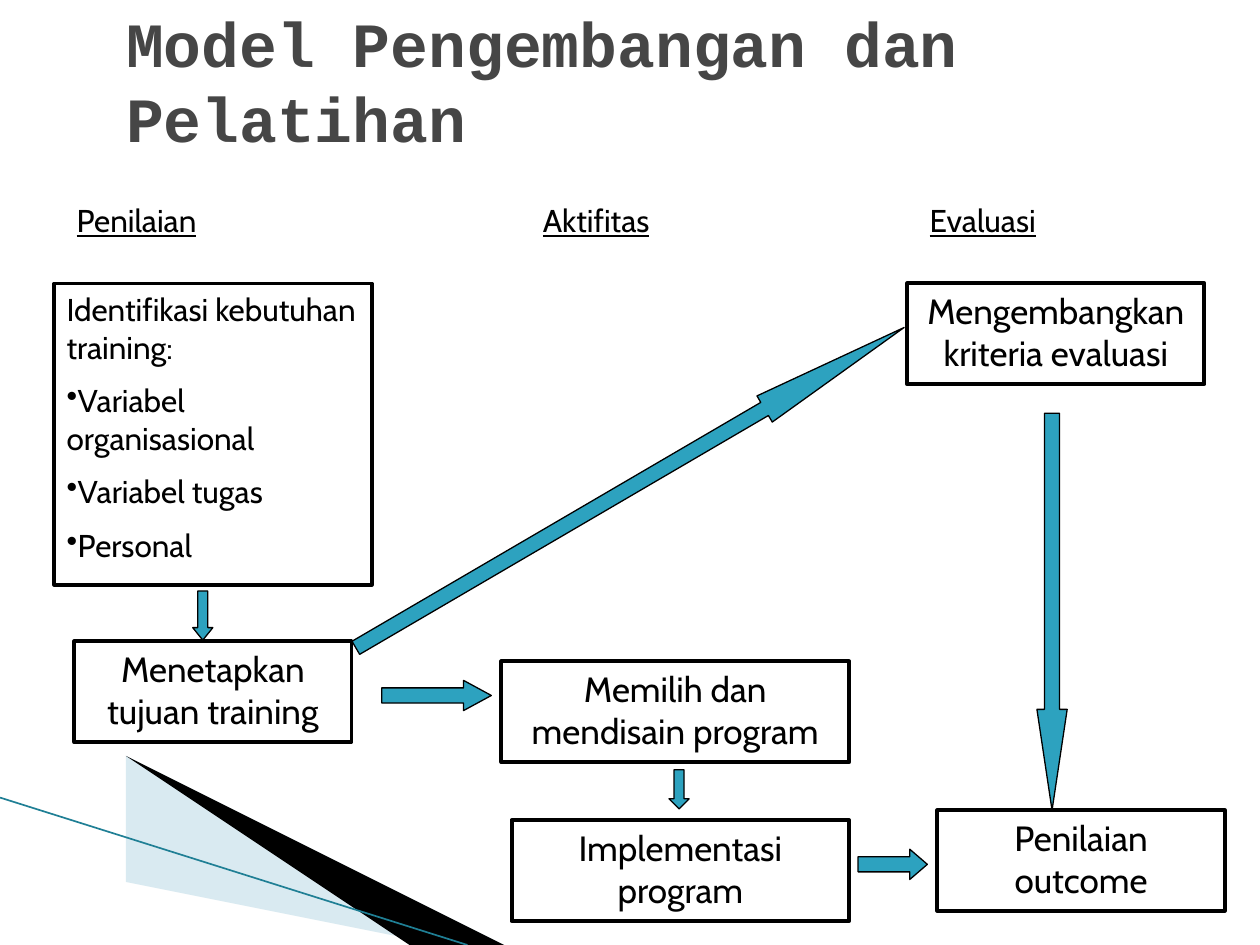
from lxml.etree import SubElement
from pptx import Presentation
from pptx.dml.color import RGBColor
from pptx.enum.shapes import MSO_CONNECTOR, MSO_SHAPE
from pptx.enum.text import MSO_ANCHOR as ANCHOR, MSO_AUTO_SIZE as AUTO, PP_ALIGN as ALIGN
from pptx.oxml.ns import qn
from pptx.util import Inches, Pt

BLACK, GREY, TEAL, EDGE, PALE = "000000", "464646", "2DA2BF", "1F7F95", "A0CBDC"
RIGHT, DOWN = MSO_SHAPE.RIGHT_ARROW, MSO_SHAPE.DOWN_ARROW

TITLE = "Model Pengembangan dan Pelatihan"

# Column headings: text, left, width
HEADINGS = [("Penilaian", 0.51, 2.36), ("Aktifitas", 4.21, 1.81), ("Evaluasi", 7.28, 2.28)]
HEADING_TOP, HEADING_HEIGHT = 1.55, 0.5

NEEDS = ["Identifikasi kebutuhan training:", "Variabel organisasional", "Variabel tugas", "Personal"]
NEEDS_AREA = (0.43, 2.25, 2.52, 2.39)

# Step boxes: text, left, top, width
STEPS = [
    ("Menetapkan tujuan training", 0.59, 5.09, 2.2),
    ("Memilih dan mendisain program", 3.98, 5.25, 2.76),
    ("Implementasi program", 4.06, 6.51, 2.68),
    ("Penilaian outcome", 7.44, 6.43, 2.28),
    ("Mengembangkan kriteria evaluasi", 7.2, 2.25, 2.36),
]
STEP_HEIGHT = 0.8

# Block arrows: kind, area, head length relative to the thickness, rotation
ARROWS = [
    (RIGHT, (3.03, 5.4, 0.87, 0.24), 0.92, 0),
    (DOWN, (5.31, 6.11, 0.16, 0.31), 0.5, 0),
    (RIGHT, (6.81, 6.74, 0.55, 0.24), 0.58, 0),
    (DOWN, (1.53, 4.69, 0.16, 0.39), 0.62, 0),
    (DOWN, (8.23, 3.28, 0.24, 3.15), 3.33, 0),
    (RIGHT, (2.48, 3.75, 5.04, 0.24), 5.34, 329.7),
]

# Corner wedges: points, colour, opacity in percent
WEDGES = [
    ([(0.55, 6.51), (5.95, 7.5), (4.56, 7.5), (0.55, 6.5)], PALE, 40),
    ([(0.53, 6.49), (4.57, 7.5), (3.72, 7.5), (0.54, 6.5)], BLACK, 100),
]
CORNER_LINE = (0, 6.33, 3.71, 7.5)


def color(value):
    return RGBColor.from_string(value)


def inches(values):
    return [Inches(value) for value in values]


def write(shape, lines, size=18, font="Cabin", ink=BLACK, bold=False, underline=False,
          align=ALIGN.LEFT, anchor=ANCHOR.TOP, bullets=False):
    """Fill a shape with paragraphs; bullets start at the second one."""
    frame = shape.text_frame
    frame.word_wrap = True
    frame.auto_size = AUTO.NONE
    frame.vertical_anchor = anchor
    for index, line in enumerate(lines):
        para = frame.add_paragraph() if index else frame.paragraphs[0]
        para.alignment = align
        if index:
            para.space_before = Pt(size / 2)
            if bullets:
                SubElement(para._p.get_or_add_pPr(), qn("a:buChar"), char="•")
        span = para.add_run()
        span.text = line
        span.font.name, span.font.size = font, Pt(size)
        span.font.bold, span.font.underline = bold, underline
        span.font.color.rgb = color(ink)


def paint(shape, fill=None, line=None, width=0.75):
    shape.shadow.inherit = False
    if fill:
        shape.fill.solid()
        shape.fill.fore_color.rgb = color(fill)
    else:
        shape.fill.background()
    if line:
        shape.line.color.rgb = color(line)
        shape.line.width = Pt(width)
    else:
        shape.line.fill.background()


def add_box(shapes, area, lines, **style):
    box = shapes.add_shape(MSO_SHAPE.RECTANGLE, *inches(area))
    paint(box, line=BLACK, width=2.25)
    write(box, lines, **style)


def add_corner(shapes):
    for points, fill, opacity in WEDGES:
        builder = shapes.build_freeform(*points[0], scale=Inches(1))
        builder.add_line_segments(points[1:], close=True)
        wedge = builder.convert_to_shape()
        paint(wedge, fill=fill)
        if opacity < 100:
            tone = wedge._element.spPr.find(qn("a:solidFill"))[0]
            SubElement(tone, qn("a:alpha"), val=str(opacity * 1000))
    line = shapes.add_connector(MSO_CONNECTOR.STRAIGHT, *inches(CORNER_LINE))
    line.line.color.rgb = color(EDGE)
    line.line.width = Pt(0.95)
    SubElement(line._element.spPr, qn("a:effectLst"))


def main():
    deck = Presentation()
    deck.slide_width, deck.slide_height = Inches(10), Inches(7.5)
    page = deck.slides.add_slide(deck.slide_layouts[5])
    shapes = page.shapes
    add_corner(shapes)

    # Title
    title = shapes.title
    title.left, title.top, title.width, title.height = inches((0.9, 0.28, 8.5, 0.71))
    write(title, [TITLE], size=36, font="Courier New", ink=GREY, bold=True, anchor=ANCHOR.MIDDLE)

    # Column headings
    for text, left, width in HEADINGS:
        box = shapes.add_textbox(*inches((left, HEADING_TOP, width, HEADING_HEIGHT)))
        write(box, [text], underline=True)

    # Boxes
    add_box(shapes, NEEDS_AREA, NEEDS, bullets=True)
    for text, left, top, width in STEPS:
        add_box(shapes, (left, top, width, STEP_HEIGHT), [text], size=20, align=ALIGN.CENTER)

    # Block arrows
    for kind, area, head, rotation in ARROWS:
        arrow = shapes.add_shape(kind, *inches(area))
        arrow.adjustments[1] = head
        arrow.rotation = rotation
        paint(arrow, fill=TEAL, line=BLACK)

    deck.save("out.pptx")


if __name__ == "__main__":
    main()
